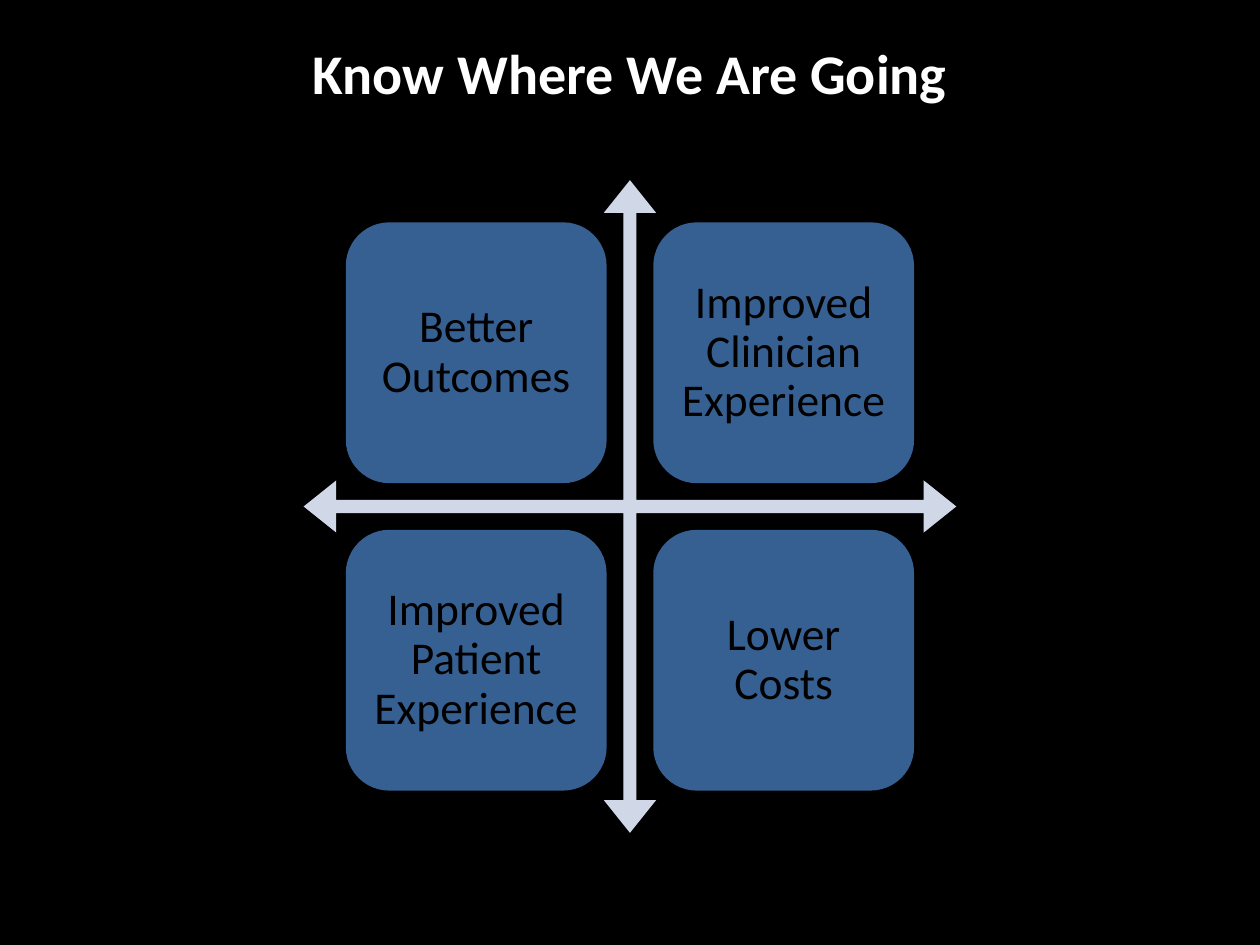
from dataclasses import dataclass

from pptx import Presentation
from pptx.dml.color import RGBColor
from pptx.enum import shapes, text
from pptx.util import Inches, Pt

BLACK = RGBColor(0x00, 0x00, 0x00)
WHITE = RGBColor(0xFF, 0xFF, 0xFF)
BLUE = RGBColor(0x37, 0x60, 0x92)
PALE_BLUE = RGBColor(0xD0, 0xD8, 0xE8)
FONT = "Calibri"

# Matrix geometry in inches
CENTER_X, CENTER_Y = 5.0, 4.02
ARROW_SIZE = 5.18
CARD_SIZE = 2.07
CARD_OFFSET = 1.22  # from the matrix center to a card's center
CARD_INSET = 0.11


@dataclass(frozen=True)
class Goal:
    label: str
    column: int  # -1 left, 1 right
    row: int  # -1 top, 1 bottom


GOALS = [
    Goal("Better Outcomes", -1, -1),
    Goal("Improved Clinician Experience", 1, -1),
    Goal("Improved Patient Experience", -1, 1),
    Goal("Lower Costs", 1, 1),
]


def add_square(slide, kind, center_x: float, center_y: float, size: float, color: RGBColor):
    """Add a flat square shape around a center point."""
    shape = slide.shapes.add_shape(
        kind, Inches(center_x - size / 2), Inches(center_y - size / 2), Inches(size), Inches(size)
    )
    shape.shadow.inherit = False
    shape.fill.solid()
    shape.fill.fore_color.rgb = color
    shape.line.fill.background()
    return shape


def set_text(shape, label: str, size: int, color: RGBColor, bold: bool = False):
    """Write one centered paragraph and return it."""
    frame = shape.text_frame
    frame.text = label
    frame.vertical_anchor = text.MSO_ANCHOR.MIDDLE
    paragraph = frame.paragraphs[0]
    paragraph.alignment = text.PP_ALIGN.CENTER
    font = paragraph.runs[0].font
    font.name, font.size, font.bold = FONT, Pt(size), bold
    font.color.rgb = color
    return paragraph


def add_goal(slide, goal: Goal) -> None:
    card = add_square(
        slide,
        shapes.MSO_SHAPE.ROUNDED_RECTANGLE,
        CENTER_X + goal.column * CARD_OFFSET,
        CENTER_Y + goal.row * CARD_OFFSET,
        CARD_SIZE,
        BLUE,
    )
    frame = card.text_frame
    frame.word_wrap = True
    frame.margin_left = frame.margin_right = Inches(CARD_INSET)
    frame.margin_top = frame.margin_bottom = Inches(CARD_INSET)
    paragraph = set_text(card, goal.label, 26, BLACK)
    paragraph.line_spacing = 0.9


def main() -> None:
    presentation = Presentation()
    presentation.slide_width = Inches(10)
    presentation.slide_height = Inches(7.5)
    slide = presentation.slides.add_slide(presentation.slide_layouts[5])
    slide.background.fill.solid()
    slide.background.fill.fore_color.rgb = BLACK

    # Title
    title = slide.shapes.title
    title.left, title.top = Inches(2.36), Inches(0.25)
    title.width, title.height = Inches(5.28), Inches(0.64)
    title.text_frame.word_wrap = False
    title.text_frame.auto_size = text.MSO_AUTO_SIZE.NONE
    set_text(title, "Know Where We Are Going", 32, WHITE, bold=True)

    # Four-way arrow: half shaft, half head width, head length
    arrow = add_square(slide, shapes.MSO_SHAPE.QUAD_ARROW, CENTER_X, CENTER_Y, ARROW_SIZE, PALE_BLUE)
    for index, value in enumerate((0.02, 0.04, 0.05)):
        arrow.adjustments[index] = value

    # Goal cards
    for goal in GOALS:
        add_goal(slide, goal)

    presentation.save("out.pptx")


if __name__ == "__main__":
    main()
